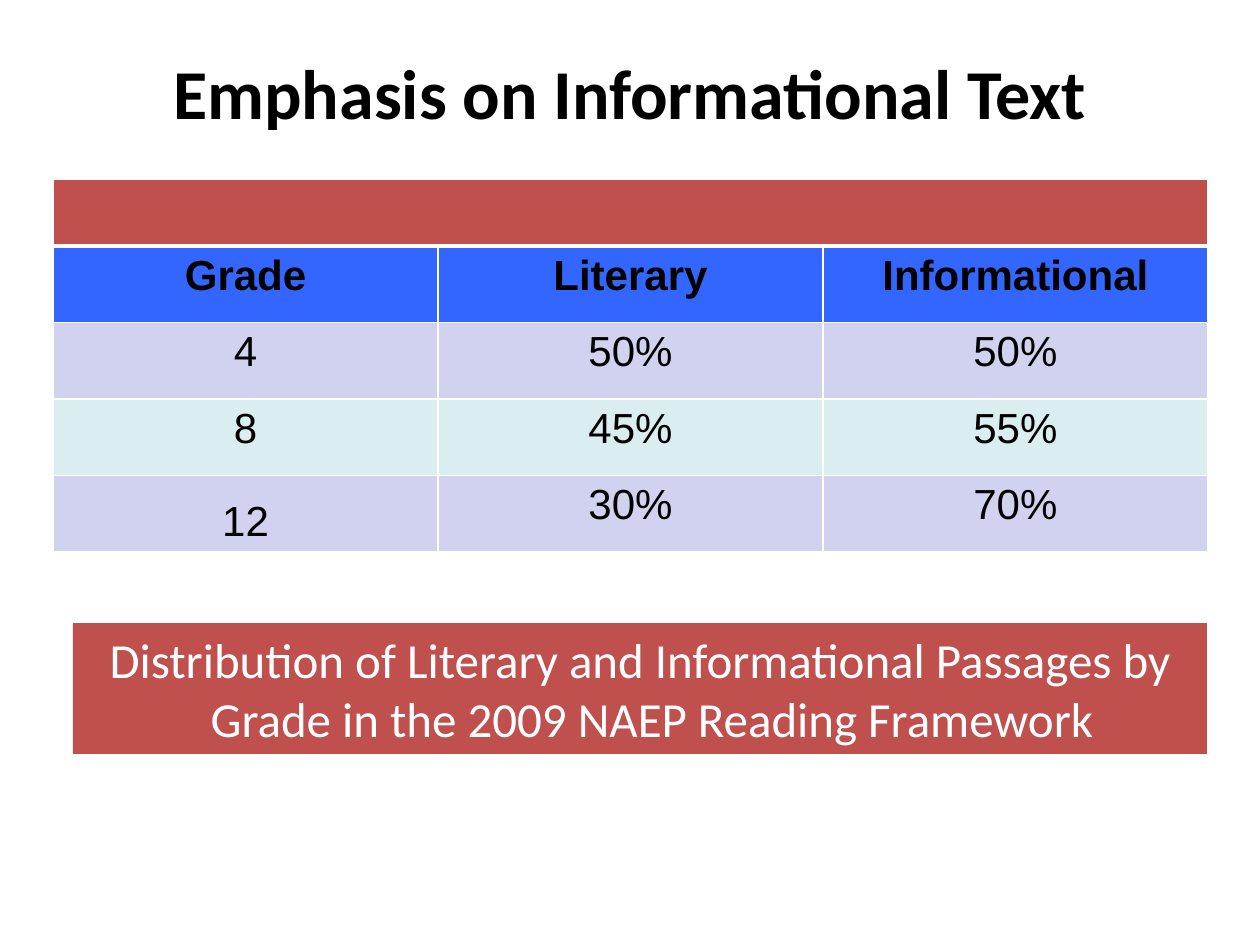
from lxml import etree
from pptx import Presentation
from pptx import util as u
from pptx.dml.color import RGBColor
from pptx.enum import text
from pptx.oxml.ns import qn

# Content
TITLE = "Emphasis on Informational Text"
HEADINGS = ["Grade", "Literary", "Informational"]
ROWS = [
    ["4", "50%", "50%"],
    ["8", "45%", "55%"],
    ["12", "30%", "70%"],
]
CAPTION = ("Distribution of Literary and Informational Passages by "
           "Grade in the 2009 NAEP Reading Framework")

# Theme: colours, fonts and type sizes
THEME = {
    "red": "C0504D", "blue": "3366FF", "bands": ["D1D1F0", "DAEDEF"],
    "black": "000000", "white": "FFFFFF",
    "head_font": "Calibri", "table_font": "Arial",
    "title": 40, "table": 24, "caption": 28,
    "rule": 1, "thick_rule": 3,
}

# Layout, in centimetres: left, top, width, height
TITLE_BOX = (1.27, 1.07, 22.86, 2.34)
TABLE_BOX = (1.07, 3.61, 23.28, 7.52)
CAPTION_BOX = (1.47, 12.56, 22.86, 2.64)
BANNER_HEIGHT = 1.35
HANGING = 0.48


def place(sp, box):
    sp.left, sp.top, sp.width, sp.height = map(u.Cm, box)


def fill(obj, color):
    obj.fill.solid()
    obj.fill.fore_color.rgb = RGBColor.from_string(color)


def write(tf, words, size, font, color, bold=False):
    p = tf.paragraphs[0]
    p.alignment = text.PP_ALIGN.CENTER
    r = p.add_run()
    r.text = words
    r.font.size, r.font.name, r.font.bold = u.Pt(size), font, bold
    r.font.color.rgb = RGBColor.from_string(color)
    return p


def set_borders(cell, top, bottom):
    """Draw white rules on all four sides, ahead of the cell fill."""
    tc_pr = cell._tc.get_or_add_tcPr()
    sides = {"lnL": THEME["rule"], "lnR": THEME["rule"], "lnT": top, "lnB": bottom}
    for i, (side, width) in enumerate(sides.items()):
        ln = etree.Element(qn(f"a:{side}"), w=str(u.Pt(width)))
        solid = etree.SubElement(ln, qn("a:solidFill"))
        etree.SubElement(solid, qn("a:srgbClr"), val=THEME["white"])
        tc_pr.insert(i, ln)


def add_table(slide):
    rows = [[""] * len(HEADINGS), HEADINGS] + ROWS
    bands = THEME["bands"]
    colors = [THEME["red"], THEME["blue"]]
    colors += [bands[i % len(bands)] for i in range(len(ROWS))]

    table = slide.shapes.add_table(len(rows), len(HEADINGS), *map(u.Cm, TABLE_BOX)).table
    for col in table.columns:
        col.width = u.Cm(TABLE_BOX[2] / len(HEADINGS))
    row_height = (TABLE_BOX[3] - BANNER_HEIGHT) / (len(rows) - 1)

    for i, (row, color) in enumerate(zip(rows, colors)):
        table.rows[i].height = u.Cm(row_height if i else BANNER_HEIGHT)
        for j, words in enumerate(row):
            cell = table.cell(i, j)
            fill(cell, color)
            set_borders(cell, THEME["thick_rule"] if i == 1 else THEME["rule"],
                        THEME["thick_rule"] if i == 0 else THEME["rule"])
            if words:
                write(cell.text_frame, words, THEME["table"], THEME["table_font"],
                      THEME["black"], bold=i == 1)

    # Banner across the top; last grade sits at the foot of its cell
    table.cell(0, 0).merge(table.cell(0, len(HEADINGS) - 1))
    table.cell(len(rows) - 1, 0).vertical_anchor = text.MSO_ANCHOR.BOTTOM


def main():
    prs = Presentation()
    prs.slide_width, prs.slide_height = u.Cm(25.4), u.Cm(19.05)
    slide = prs.slides.add_slide(prs.slide_layouts[1])

    # Title
    title = slide.shapes.title
    place(title, TITLE_BOX)
    title.text_frame.vertical_anchor = text.MSO_ANCHOR.TOP
    p = write(title.text_frame, TITLE, THEME["title"], THEME["head_font"],
              THEME["black"], bold=True)
    p.line_spacing = 0.9

    # Table
    add_table(slide)

    # Caption, in a box of fixed height
    caption = slide.placeholders[1]
    place(caption, CAPTION_BOX)
    fill(caption, THEME["red"])
    caption.text_frame.auto_size = text.MSO_AUTO_SIZE.NONE
    p = write(caption.text_frame, CAPTION, THEME["caption"], THEME["head_font"],
              THEME["white"])
    p_pr = p._p.get_or_add_pPr()
    p_pr.set("marL", str(u.Cm(HANGING)))
    p_pr.set("indent", str(-u.Cm(HANGING)))
    etree.SubElement(p_pr, qn("a:buNone"))

    prs.save("out.pptx")


if __name__ == "__main__":
    main()
